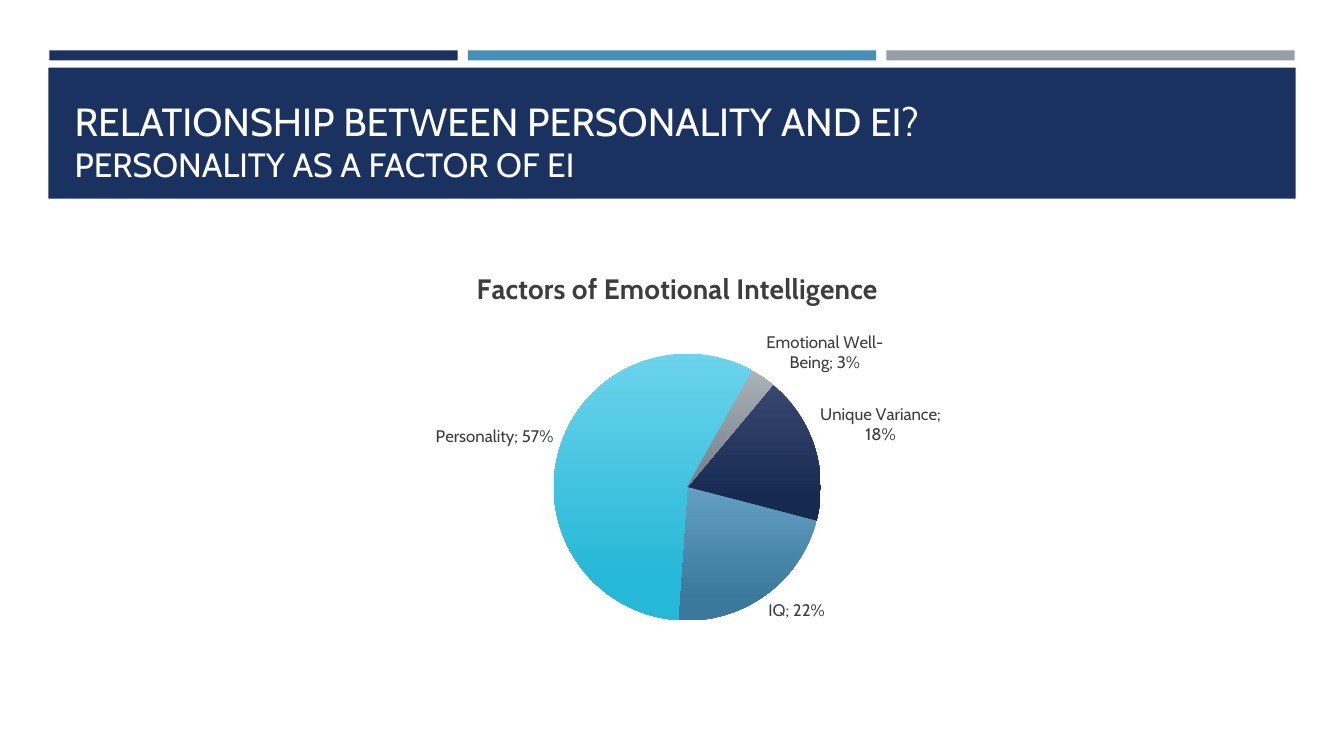
from lxml.etree import SubElement
from pptx import Presentation
from pptx.chart.data import CategoryChartData
from pptx.dml.color import RGBColor
from pptx.enum.chart import XL_CHART_TYPE, XL_LABEL_POSITION
from pptx.enum.shapes import MSO_SHAPE
from pptx.enum.text import MSO_ANCHOR, MSO_AUTO_SIZE, PP_ALIGN
from pptx.oxml import parse_xml
from pptx.oxml.ns import nsdecls, qn
from pptx.util import Inches, Pt

FONT = "Cabin"
NAVY = RGBColor(0x1A, 0x32, 0x60)
BLUE = RGBColor(0x45, 0x90, 0xB8)
GRAY = RGBColor(0x96, 0x9F, 0xA7)
WHITE = RGBColor(0xFF, 0xFF, 0xFF)
DARK_TEXT = RGBColor(0x3D, 0x3D, 0x3D)

FACTORS = [
    ("Unique Variance", 0.18, RGBColor(0x39, 0x47, 0x71), RGBColor(0x16, 0x2A, 0x51)),
    ("IQ", 0.22, RGBColor(0x63, 0x9F, 0xC1), RGBColor(0x3A, 0x79, 0x9B)),
    ("Personality", 0.57, RGBColor(0x6B, 0xD4, 0xEC), RGBColor(0x26, 0xB8, 0xD7)),
    ("Emotional Well-Being", 0.03, RGBColor(0xAB, 0xB2, 0xB8), RGBColor(0x7C, 0x86, 0x8F)),
]


def style_font(font, size, color, bold=False):
    """Apply the slide's typeface with a size and colour."""
    font.name = FONT
    font.size = Pt(size)
    font.bold = bold
    font.color.rgb = color


def add_bar(slide, left, top, width, height, color):
    """Add a flat rectangle without an outline."""
    bar = slide.shapes.add_shape(
        MSO_SHAPE.RECTANGLE, Inches(left), Inches(top), Inches(width), Inches(height)
    )
    bar.shadow.inherit = False
    bar.fill.solid()
    bar.fill.fore_color.rgb = color
    bar.line.fill.background()


def format_title(title):
    """Place the title over the banner and write its two lines."""
    title.left, title.top = Inches(0.64), Inches(0.77)
    title.width, title.height = Inches(12.06), Inches(1.11)
    frame = title.text_frame
    frame.auto_size = MSO_AUTO_SIZE.NONE
    frame.word_wrap = True
    frame.vertical_anchor = MSO_ANCHOR.BOTTOM
    paragraph = frame.paragraphs[0]
    paragraph.text = "RELATIONSHIP BETWEEN PERSONALITY AND EI?\vPERSONALITY AS A FACTOR OF EI"
    paragraph.alignment = PP_ALIGN.LEFT
    for run, size in zip(paragraph.runs, (28, 24)):
        style_font(run.font, size, WHITE)


def make_layout(**fractions):
    """Return a manual chart layout given as fractions of the chart area."""
    layout = parse_xml(f"<c:layout {nsdecls('c')}><c:manualLayout/></c:layout>")
    manual = layout[0]
    if "w" in fractions:
        SubElement(manual, qn("c:layoutTarget")).set("val", "inner")
    for axis in ("x", "y"):
        SubElement(manual, qn(f"c:{axis}Mode")).set("val", "edge")
    for name, value in fractions.items():
        SubElement(manual, qn(f"c:{name}")).set("val", str(value))
    return layout


def replace_layout(parent, position, layout):
    """Put a layout into a chart element in place of any earlier one."""
    for earlier in parent.findall(qn("c:layout")):
        parent.remove(earlier)
    parent.insert(position, layout)


def format_labels(plot):
    """Show category and percentage outside each slice."""
    plot.has_data_labels = True
    labels = plot.data_labels
    labels.show_category_name = True
    labels.show_value = True
    labels.show_percentage = False
    labels.number_format = "0%"
    labels.number_format_is_linked = False
    labels.position = XL_LABEL_POSITION.OUTSIDE_END
    style_font(labels.font, 12, DARK_TEXT)
    separator = parse_xml(f"<c:separator {nsdecls('c')}>; </c:separator>")
    labels._element.find(qn("c:showBubbleSize")).addnext(separator)


def fill_slice(point, light, dark):
    """Shade a slice from light at the top to dark at the bottom."""
    fill = point.format.fill
    fill.gradient()
    fill.gradient_angle = 270
    for stop, color, position in zip(fill.gradient_stops, (light, dark), (0, 0.84)):
        stop.color.rgb = color
        stop.position = position
    point.format.line.fill.background()


def add_factor_pie(slide):
    """Add the pie chart of emotional intelligence factors."""
    data = CategoryChartData(number_format="0%")
    data.categories = [name for name, *_ in FACTORS]
    data.add_series("Series 1", [value for _, value, *_ in FACTORS])
    chart = slide.shapes.add_chart(
        XL_CHART_TYPE.PIE, Inches(3.32), Inches(2.38), Inches(6.79), Inches(4.02), data
    ).chart
    style_font(chart.font, 10, DARK_TEXT)
    chart.has_legend = False
    chart.has_title = True
    title = chart.chart_title
    title.include_in_layout = False
    title.text_frame.text = "Factors of Emotional Intelligence"
    style_font(title.text_frame.paragraphs[0].runs[0].font, 20, DARK_TEXT, bold=True)
    replace_layout(title._element, 1, make_layout(x=0.2, y=0.06))

    plot = chart.plots[0]
    plot.vary_by_categories = True
    format_labels(plot)
    SubElement(plot._element, qn("c:firstSliceAng")).set("val", "40")
    replace_layout(plot._element.getparent(), 0, make_layout(x=0.32, y=0.28, w=0.39, h=0.66))
    for index, (_, _, light, dark) in enumerate(FACTORS):
        fill_slice(plot.series[0].points[index], light, dark)


def main():
    """Build and save the slide."""
    presentation = Presentation()
    presentation.slide_width, presentation.slide_height = Inches(13.33), Inches(7.5)
    slide = presentation.slides.add_slide(presentation.slide_layouts[5])
    for index, color in enumerate((NAVY, BLUE, GRAY)):
        add_bar(slide, 0.49 + index * 4.15, 0.5, 4.05, 0.1, color)
    add_bar(slide, 0.48, 0.67, 12.37, 1.3, NAVY)
    title = slide.shapes.title
    slide.shapes._spTree.append(title._element)
    format_title(title)
    add_factor_pie(slide)
    presentation.save("out.pptx")


if __name__ == "__main__":
    main()
